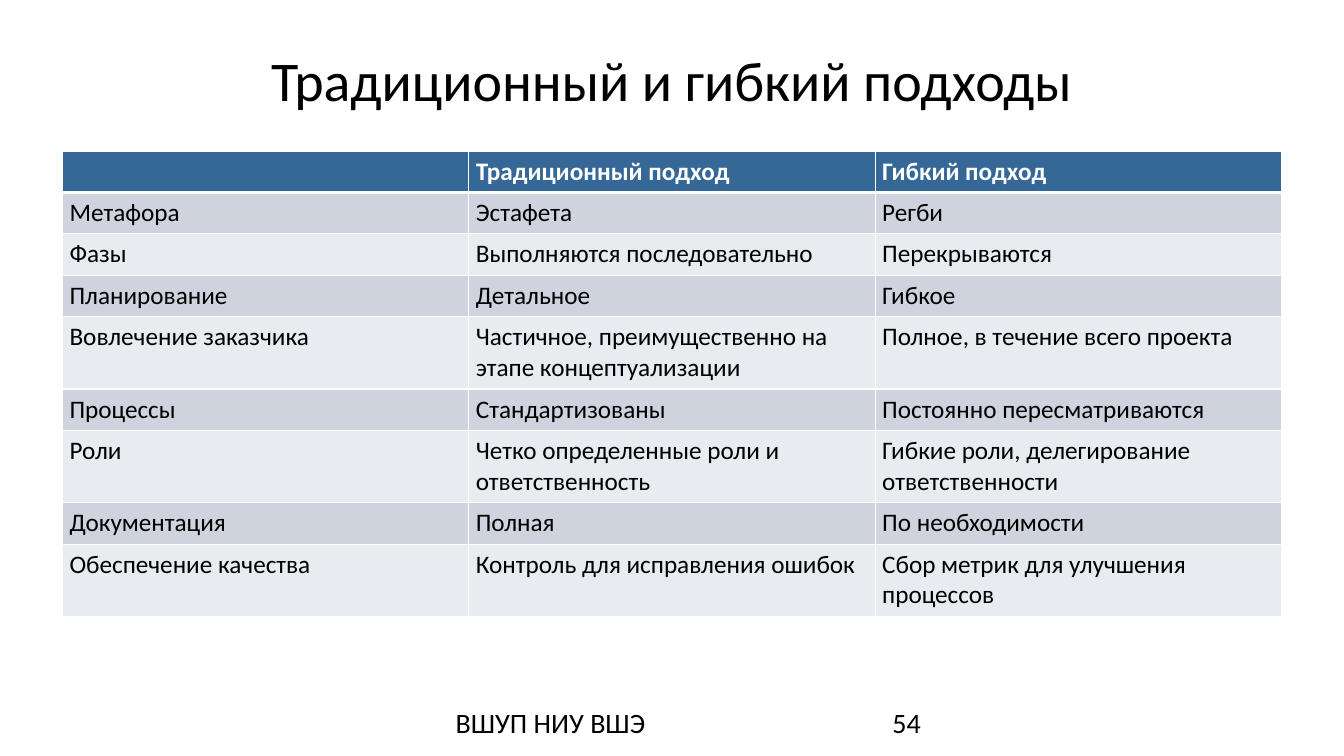
from lxml.etree import SubElement
from pptx import Presentation
from pptx.dml.color import RGBColor
from pptx.enum.text import PP_ALIGN
from pptx.oxml.ns import qn
from pptx.util import Inches, Pt

COLORS = {"text": "000000", "white": "FFFFFF", "header": "356797",
          "odd": "CED3DD", "even": "E8EBEF"}
W, H = 13.33, 7.5
LINE_HEIGHT = 0.31
PAD_X, PAD_Y = 0.07, 0.05
THIN, THICK = 1, 3
HEADER = ("", "Традиционный подход", "Гибкий подход")
ROWS = [
    (1, "Метафора", "Эстафета", "Регби"),
    (1, "Фазы", "Выполняются последовательно", "Перекрываются"),
    (1, "Планирование", "Детальное", "Гибкое"),
    (2, "Вовлечение заказчика", "Частичное, преимущественно на этапе концептуализации",
     "Полное, в течение всего проекта"),
    (1, "Процессы", "Стандартизованы", "Постоянно пересматриваются"),
    (2, "Роли", "Четко определенные роли и ответственность",
     "Гибкие роли, делегирование ответственности"),
    (1, "Документация", "Полная", "По необходимости"),
    (2, "Обеспечение качества", "Контроль для исправления ошибок",
     "Сбор метрик для улучшения процессов"),
]


def write(tf, text, size=18, color="text", bold=False, align=PP_ALIGN.LEFT):
    """Put one formatted run into a text frame."""
    p = tf.paragraphs[0]
    p.alignment = align
    r = p.add_run()
    r.text = text
    r.font.name = "Calibri"
    r.font.size = Pt(size)
    r.font.bold = bold
    r.font.color.rgb = RGBColor.from_string(COLORS[color])


def add_text(s, box, text, **fmt):
    """Add a wrapping text box in the given box."""
    tf = s.shapes.add_textbox(*map(Inches, box)).text_frame
    tf.word_wrap = True
    write(tf, text, **fmt)


def set_borders(cell, top, bottom):
    """Draw white cell borders with the given top and bottom widths."""
    tcPr = cell._tc.get_or_add_tcPr()
    for side, width in (("L", THIN), ("R", THIN), ("T", top), ("B", bottom)):
        ln = SubElement(tcPr, qn(f"a:ln{side}"), w=str(Pt(width)))
        fill = SubElement(ln, qn("a:solidFill"))
        SubElement(fill, qn("a:srgbClr"), val=COLORS["white"])


def fill_row(cells, texts, band, top=THIN, bottom=THIN, **fmt):
    """Fill one table row with texts on a colour band."""
    for cell, text in zip(cells, texts):
        cell.margin_left = cell.margin_right = Inches(PAD_X)
        cell.margin_top = cell.margin_bottom = Inches(PAD_Y)
        set_borders(cell, top, bottom)
        cell.fill.solid()
        cell.fill.fore_color.rgb = RGBColor.from_string(COLORS[band])
        if text:
            write(cell.text_frame, text, **fmt)


def add_title(s, box):
    """Add the centred slide title."""
    add_text(s, box, "Традиционный и гибкий подходы", size=40, align=PP_ALIGN.CENTER)


def add_comparison(s, left, top, width):
    """Add the banded table with equal columns and rows sized by line count."""
    line_counts = [1] + [lines for lines, *_ in ROWS]
    heights = [2 * PAD_Y + LINE_HEIGHT * lines for lines in line_counts]
    box = map(Inches, (left, top, width, sum(heights)))
    table = s.shapes.add_table(len(heights), len(HEADER), *box).table
    for row, height in zip(table.rows, heights):
        row.height = Inches(height)
    header_row, *body_rows = table.rows
    fill_row(header_row.cells, HEADER, "header", bottom=THICK, color="white", bold=True)
    for i, (row, (_, *texts)) in enumerate(zip(body_rows, ROWS), start=1):
        fill_row(row.cells, texts, "odd" if i % 2 else "even",
                 top=THICK if i == 1 else THIN)


def add_footer(s, left, top, width, height):
    """Add the organisation name and, in the last third, the slide number."""
    number_width = width / 3
    number_left = left + width - number_width
    add_text(s, (left, top, 2 * number_width, height), "ВШУП НИУ ВШЭ", size=20)
    add_text(s, (number_left, top, number_width, height), "54", size=20)


def main():
    """Build and save the slide."""
    prs = Presentation()
    prs.slide_width, prs.slide_height = Inches(W), Inches(H)
    s = prs.slides.add_slide(prs.slide_layouts[6])
    add_title(s, (2.35, 0.4, 8.62, 1.07))
    add_comparison(s, 0.62, 0.2 * H, 12.09)
    add_footer(s, 4.42, 6.95, 6.5, 0.4)
    prs.save("out.pptx")


if __name__ == "__main__":
    main()
